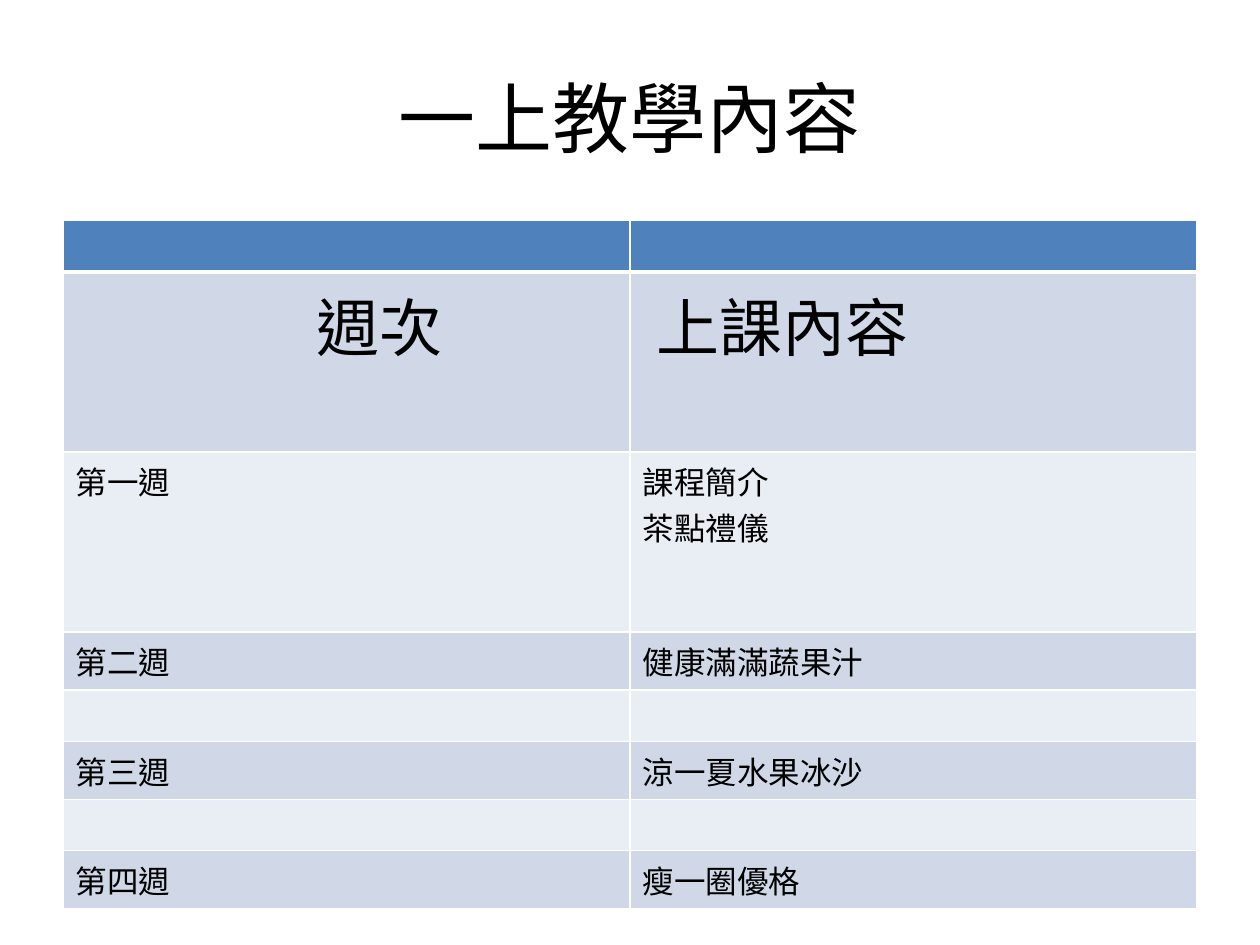
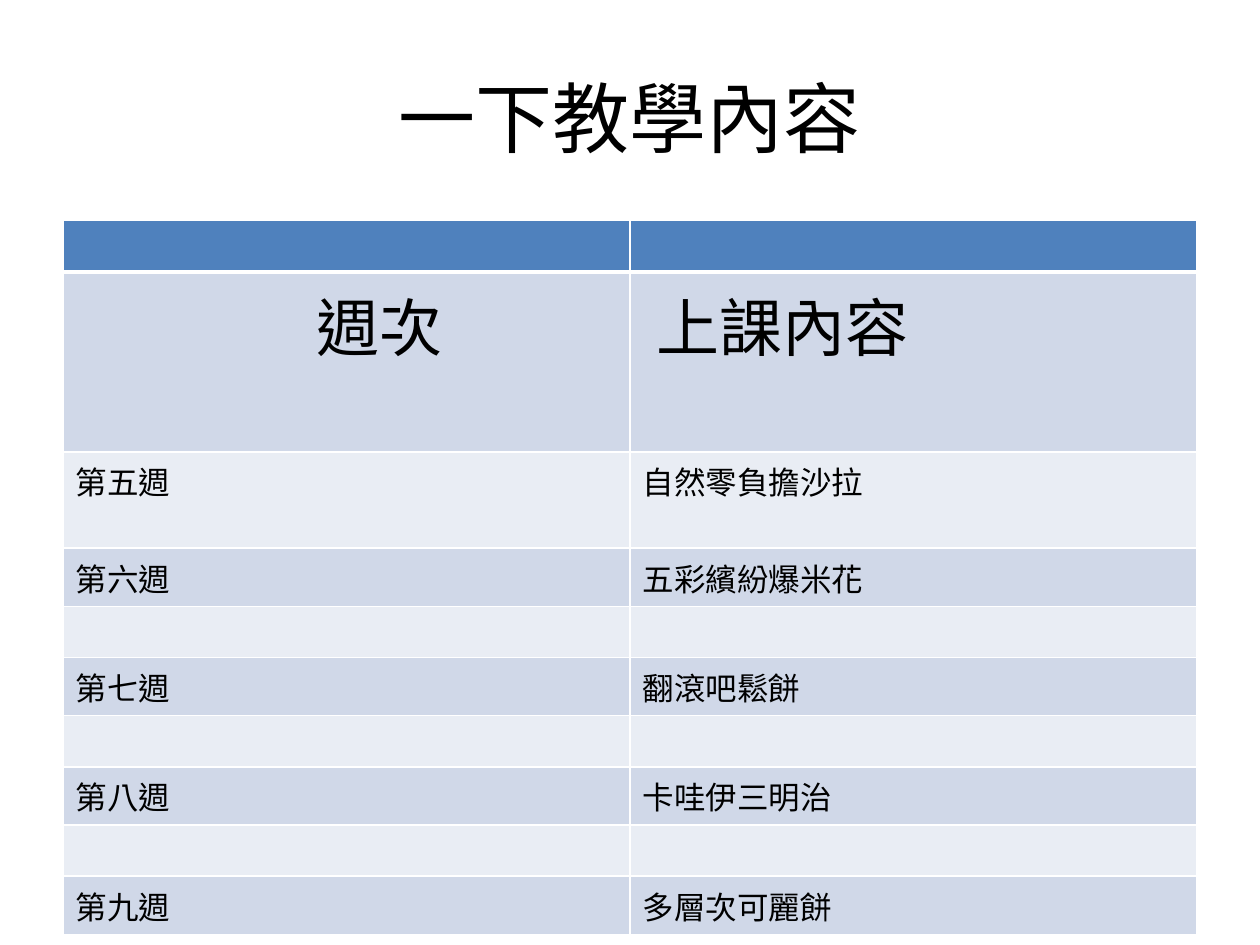
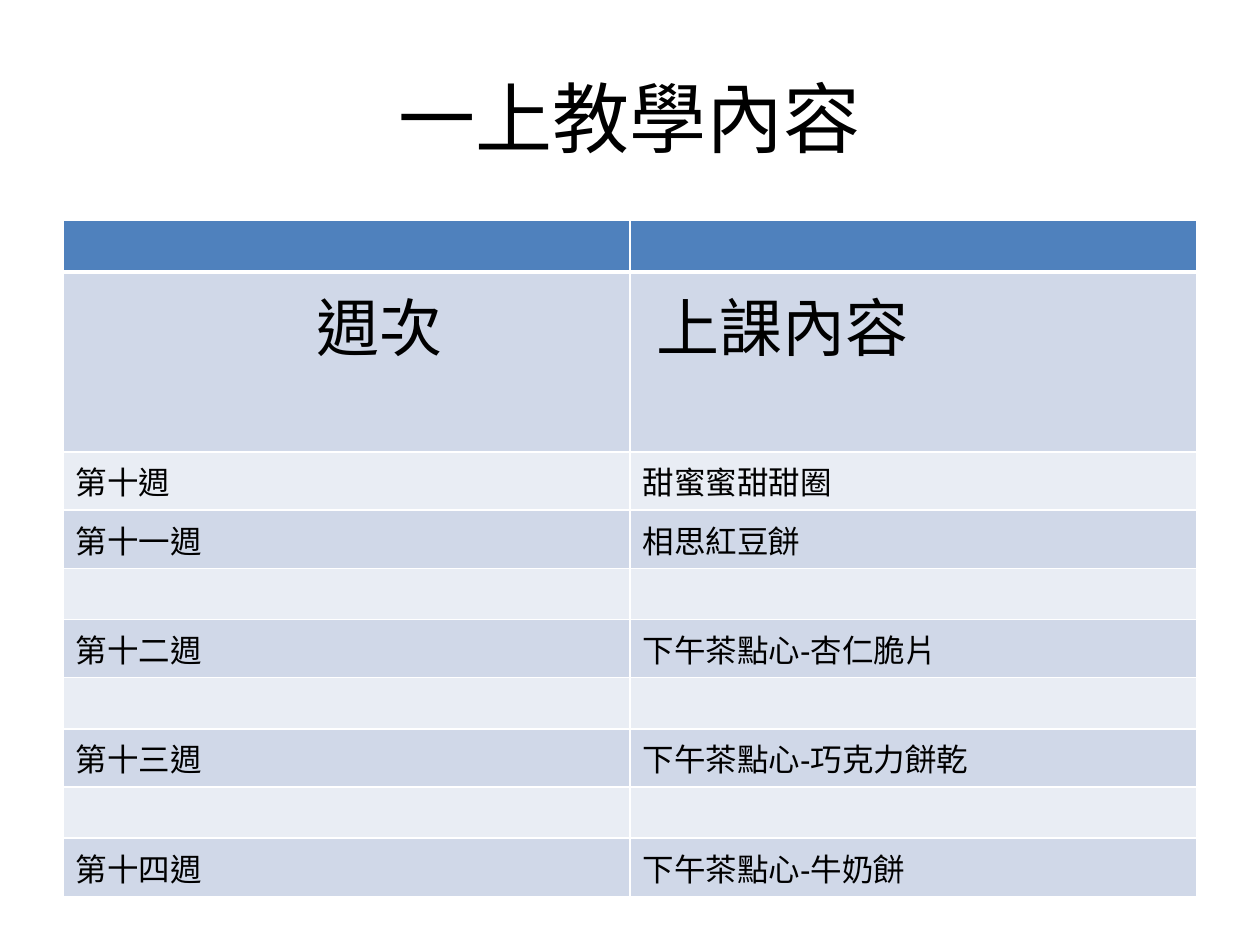
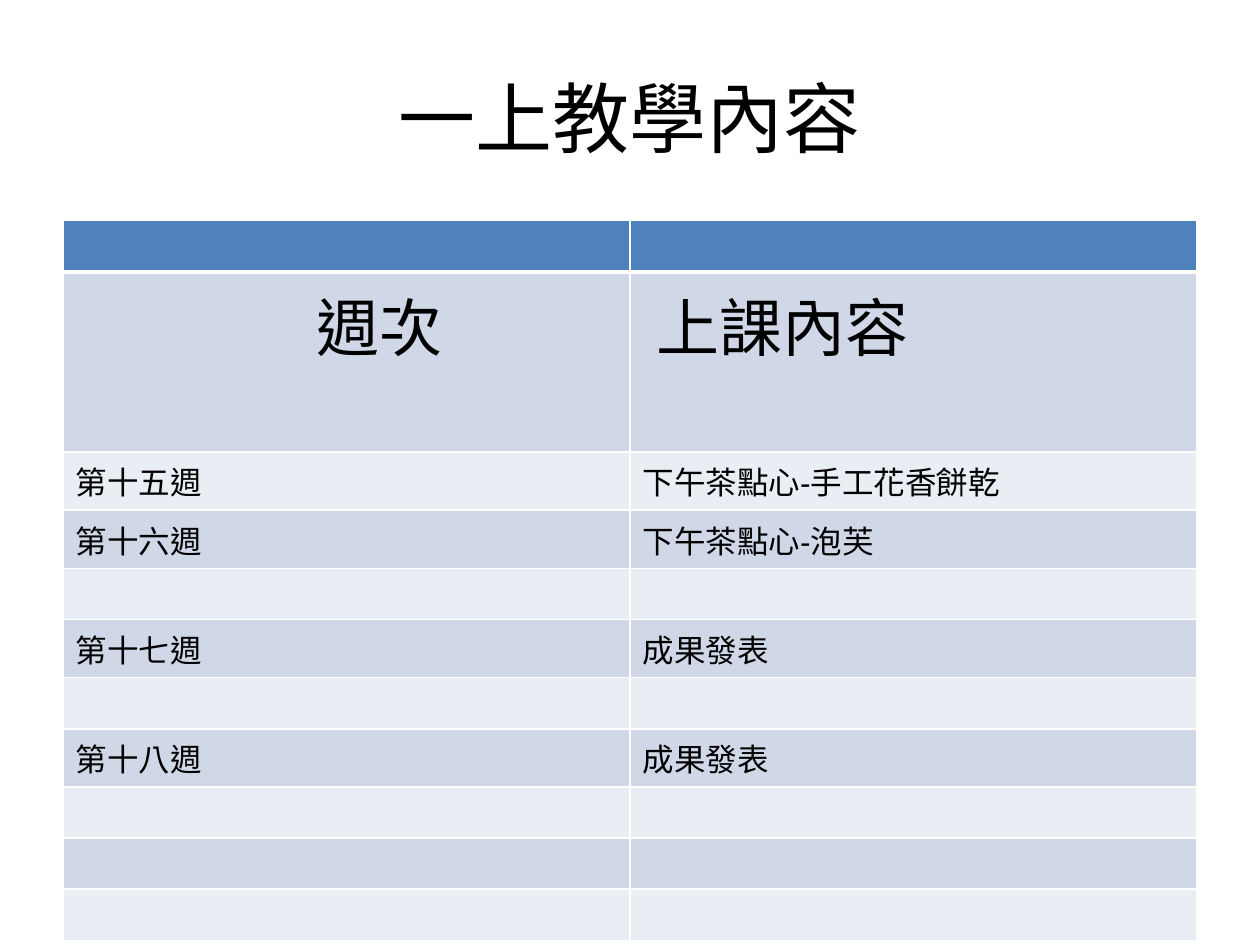
from lxml import etree
from pptx import Presentation
from pptx import util as u
from pptx.dml.color import RGBColor
from pptx.enum import lang, text
from pptx.oxml.ns import qn

BLACK = RGBColor(0x00, 0x00, 0x00)
WHITE = RGBColor(0xFF, 0xFF, 0xFF)
BLUE = RGBColor(0x4F, 0x81, 0xBD)
BAND_DARK = RGBColor(0xD0, 0xD8, 0xE8)
BAND_LIGHT = RGBColor(0xE9, 0xED, 0xF4)

LEFT, WIDTH = 1.27, 22.86
EMPTY_ROW, TEXT_ROW, HEADING_ROW = 1.03, 1.17, 3.63
HEADINGS = [("週次", 5.11), ("上課內容", 0.53)]
EMPTY = ("", "")

FIRST_TERM = "一上教學內容"
SECOND_TERM = "一下教學內容"
SLIDES = [
    (FIRST_TERM, 3.63, [
        ("第一週", "課程簡介\n茶點禮儀"),
        ("第二週", "健康滿滿蔬果汁"), EMPTY,
        ("第三週", "涼一夏水果冰沙"), EMPTY,
        ("第四週", "瘦一圈優格"),
    ]),
    (SECOND_TERM, 1.94, [
        ("第五週", "自然零負擔沙拉"),
        ("第六週", "五彩繽紛爆米花"), EMPTY,
        ("第七週", "翻滾吧鬆餅"), EMPTY,
        ("第八週", "卡哇伊三明治"), EMPTY,
        ("第九週", "多層次可麗餅"),
    ]),
    (FIRST_TERM, TEXT_ROW, [
        ("第十週", "甜蜜蜜甜甜圈"),
        ("第十一週", "相思紅豆餅"), EMPTY,
        ("第十二週", "下午茶點心-杏仁脆片"), EMPTY,
        ("第十三週", "下午茶點心-巧克力餅乾"), EMPTY,
        ("第十四週", "下午茶點心-牛奶餅"),
    ]),
    (FIRST_TERM, TEXT_ROW, [
        ("第十五週", "下午茶點心-手工花香餅乾"),
        ("第十六週", "下午茶點心-泡芙"), EMPTY,
        ("第十七週", "成果發表"), EMPTY,
        ("第十八週", "成果發表"), EMPTY, EMPTY, EMPTY,
    ]),
]


class Deck:
    title_font, table_font = "Calibri", "Arial"

    def __init__(self):
        self.prs = Presentation()
        self.prs.slide_width, self.prs.slide_height = u.Cm(25.4), u.Cm(19.05)
        self.s = None

    def slide(self):
        self.s = self.prs.slides.add_slide(self.prs.slide_layouts[5])

    def run(self, p, words, size, font):
        r = p.add_run()
        r.text = words
        r.font.size, r.font.name = u.Pt(size), font
        r.font.color.rgb = BLACK
        r.font.language_id = lang.MSO_LANGUAGE_ID.TRADITIONAL_CHINESE

    def title(self, words):
        sp = self.s.shapes.title
        sp.left, sp.top = u.Cm(LEFT), u.Cm(0.76)
        sp.width, sp.height = u.Cm(WIDTH), u.Cm(3.18)
        tf = sp.text_frame
        tf.vertical_anchor = text.MSO_ANCHOR.MIDDLE
        p = tf.paragraphs[0]
        p.alignment = text.PP_ALIGN.CENTER
        self.run(p, words, 44, self.title_font)

    def borders(self, cell, top, bottom):
        tc_pr = cell._tc.get_or_add_tcPr()
        for side, points in zip("LRTB", (1, 1, top, bottom)):
            ln = etree.SubElement(tc_pr, qn(f"a:ln{side}"), w=str(u.Pt(points)))
            fill = etree.SubElement(ln, qn("a:solidFill"))
            etree.SubElement(fill, qn("a:srgbClr"), val=str(WHITE))

    def cell(self, cell, row, words, size):
        self.borders(cell, 3 if row == 1 else 1, 3 if row == 0 else 1)
        cell.fill.solid()
        band = BAND_DARK if row % 2 else BAND_LIGHT
        cell.fill.fore_color.rgb = band if row else BLUE
        tf = cell.text_frame
        for i, line in enumerate(words.split("\n") if words else []):
            p = tf.add_paragraph() if i else tf.paragraphs[0]
            self.run(p, line, size, self.table_font)

    def table(self, first_height, weeks):
        rows = [EMPTY, [words for words, _ in HEADINGS], *weeks]
        heights = [TEXT_ROW if row[0] else EMPTY_ROW for row in rows]
        heights[1:3] = HEADING_ROW, first_height
        tbl = self.s.shapes.add_table(
            len(rows), 2, u.Cm(LEFT), u.Cm(4.45),
            u.Cm(WIDTH), u.Cm(sum(heights))).table
        for i, (row, height) in enumerate(zip(rows, heights)):
            tbl.rows[i].height = u.Cm(height)
            for j, words in enumerate(row):
                self.cell(tbl.cell(i, j), i, words, 36 if i == 1 else 18)
        for j, (_, margin) in enumerate(HEADINGS):
            tbl.cell(1, j).margin_left = u.Cm(margin)


def main():
    deck = Deck()
    for title, first_height, weeks in SLIDES:
        deck.slide()
        deck.title(title)
        deck.table(first_height, weeks)
    deck.prs.save("out.pptx")


if __name__ == "__main__":
    main()
